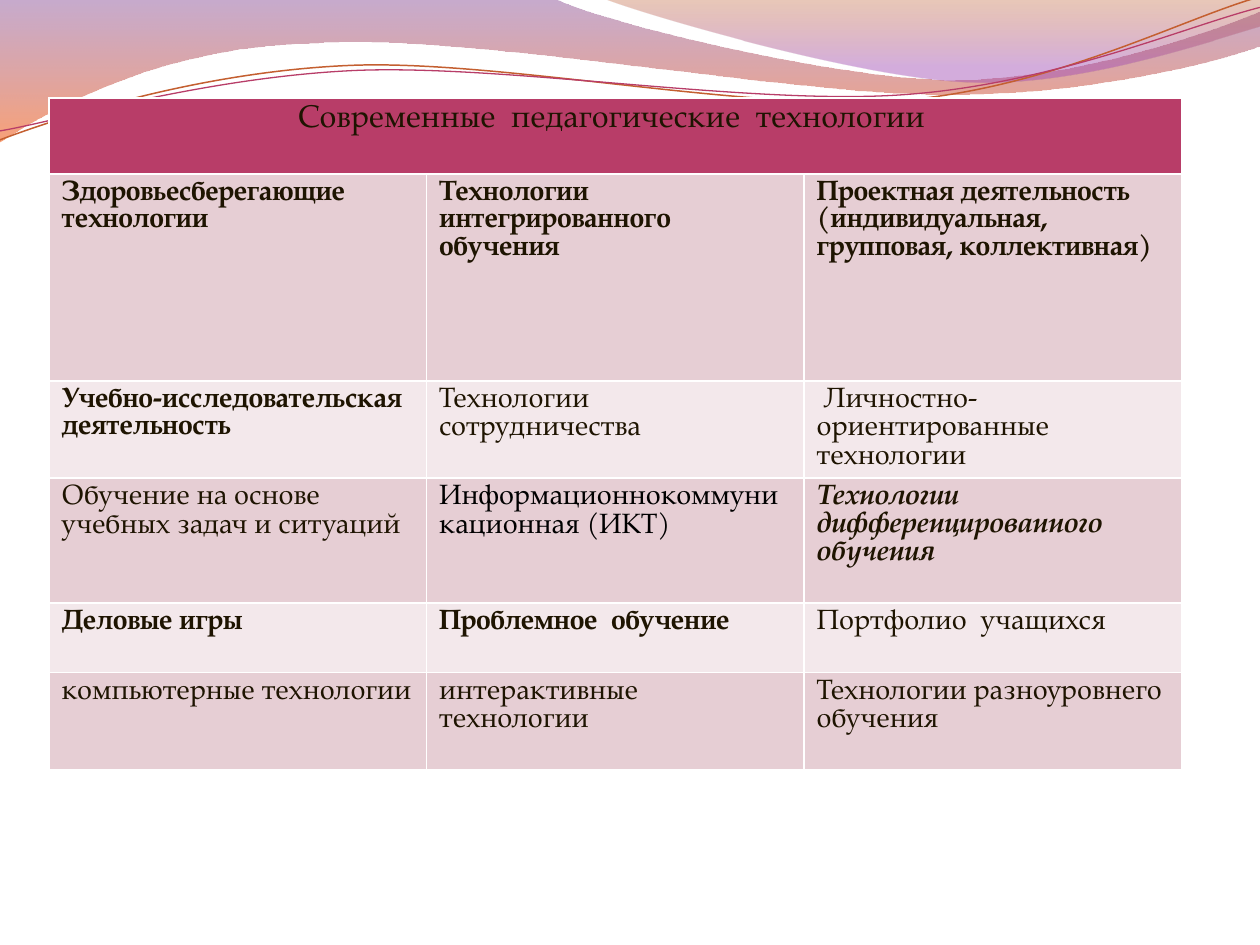
"""Build a slide with a wave header and a table of teaching technologies."""
from dataclasses import dataclass

from lxml import etree
from pptx import Presentation
from pptx import util as u
from pptx.dml.color import RGBColor
from pptx.enum import text
from pptx.oxml import ns

FONT = "TeX Gyre Pagella"
INK, BLACK = "1E1401", "000000"
HEADER_FILL, BAND_FILLS = "B83D68", ("E6CED4", "F3E8EB")
TABLE_LEFT, TABLE_TOP, COLUMN_WIDTH, TABLE_HEIGHT = 0.99, 1.98, 7.61, 15.93
ROW_HEIGHTS = (1.53, 4.17, 1.96, 2.52, 1.4, 1.96)


@dataclass(frozen=True)
class Stop:
    position: int
    color: str
    opacity: int


@dataclass(frozen=True)
class Wave:
    start: tuple
    steps: tuple
    stops: tuple = ()
    line: str = ""
    width: float = 0


@dataclass(frozen=True)
class Entry:
    words: str
    bold: bool = False
    italic: bool = False
    color: str = INK
    size: int = 16


WAVES = (
    Wave((0, 0), (
        (11.18, -0.03),
        (12.09, 0.43, 16.87, 1.6, 19.25, 1.6),
        (21.67, 1.6, 24.33, 0.66, 25.4, 0.23),
        (25.43, 0.91),
        (24.97, 1.12, 22.1, 1.93, 18.95, 1.9),
        (15.8, 1.9, 9.7, 0.71, 6.53, 0.86),
        (3.28, 0.91, 1.17, 2.11, -0.03, 2.87),
    ), stops=(Stop(0, "834591", 45), Stop(100, "F35307", 55))),
    Wave((12.17, -0.03), (
        (12.93, 0.28, 17.32, 1.57, 19.53, 1.65),
        (21.74, 1.75, 24.41, 0.81, 25.4, 0.53),
        (25.4, 0),
    ), stops=(Stop(0, "B74915", 30), Stop(80, "A14BB4", 45))),
    Wave((0, 2.82), (
        (1.22, 2.36, 4.01, 1.45, 7.04, 1.32),
        (10.03, 1.19, 15.06, 2.26, 18.11, 2.03),
        (21.16, 1.8, 23.83, 0.38, 25.35, -0.05),
    ), line="C45F30", width=0.85),
    Wave((0, 2.64), (
        (1.19, 2.44, 4.17, 1.55, 7.19, 1.42),
        (10.24, 1.3, 15.16, 2.13, 18.21, 1.91),
        (21.23, 1.7, 23.9, 0.53, 25.4, 0.15),
    ), line="B83D68", width=0.75),
)

TITLE = Entry("Современные  педагогические  технологии ", size=18)
ROWS = (
    (Entry("Здоровьесберегающие технологии", bold=True),
     Entry("Технологии интегрированного\nобучения", bold=True),
     Entry("Проектная деятельность (индивидуальная, групповая, коллективная)", bold=True)),
    (Entry("Учебно-исследовательская деятельность", bold=True),
     Entry("Технологии сотрудничества"),
     Entry(" Личностно-ориентированные технологии")),
    (Entry("Обучение на основе учебных задач и ситуаций"),
     Entry("Информационнокоммуникационная (ИКТ)", color=BLACK),
     Entry("Технологии дифференцированного обучения", bold=True, italic=True)),
    (Entry("Деловые игры", bold=True),
     Entry("Проблемное  обучение", bold=True),
     Entry("Портфолио  учащихся")),
    (Entry("компьютерные технологии"),
     Entry("интерактивные технологии"),
     Entry("Технологии разноуровнего обучения")),
)


def rgb(color: str) -> RGBColor:
    return RGBColor.from_string(color)


def add_node(parent, tag: str, **attributes):
    values = {name: str(value) for name, value in attributes.items()}
    return etree.SubElement(parent, ns.qn(tag), values)


def bend_segments(shape, steps: tuple) -> None:
    segments = list(shape.element.spPr.iter(ns.qn("a:lnTo")))
    for segment, step in zip(segments, steps):
        if len(step) == 2:
            continue
        curve = etree.Element(ns.qn("a:cubicBezTo"))
        for x, y in zip(step[::2], step[1::2]):
            add_node(curve, "a:pt", x=u.Cm(x) - shape.left, y=u.Cm(y) - shape.top)
        segment.getparent().replace(segment, curve)


def fill_gradient(shape, stops: tuple) -> None:
    shape.fill.gradient()
    gradient = shape.element.spPr.find(ns.qn("a:gradFill"))
    for child in list(gradient):
        gradient.remove(child)
    stop_list = add_node(gradient, "a:gsLst")
    for stop in stops:
        node = add_node(stop_list, "a:gs", pos=stop.position * 1000)
        color = add_node(node, "a:srgbClr", val=stop.color)
        add_node(color, "a:alpha", val=stop.opacity * 1000)
    add_node(gradient, "a:lin", ang=90 * 60000, scaled=0)


def draw_wave(page, wave: Wave) -> None:
    start, *anchors = [(u.Cm(x), u.Cm(y)) for *_, x, y in (wave.start, *wave.steps)]
    builder = page.shapes.build_freeform(*start)
    builder.add_line_segments(anchors, close=bool(wave.stops))
    shape = builder.convert_to_shape()
    bend_segments(shape, wave.steps)
    shape.shadow.inherit = False
    if wave.stops:
        fill_gradient(shape, wave.stops)
        shape.line.fill.background()
    else:
        shape.fill.background()
        shape.line.color.rgb = rgb(wave.line)
        shape.line.width = u.Pt(wave.width)


def write_cell(cell, entry: Entry, fill: str, align) -> None:
    cell.fill.solid()
    cell.fill.fore_color.rgb = rgb(fill)
    cell.text_frame.text = entry.words
    for para in cell.text_frame.paragraphs:
        para.alignment = align
        for span in para.runs:
            span.font.name = FONT
            span.font.size = u.Pt(entry.size)
            span.font.bold = entry.bold
            span.font.italic = entry.italic
            span.font.color.rgb = rgb(entry.color)


def draw_table(page) -> None:
    columns = len(ROWS[0])
    frame = page.shapes.add_table(
        len(ROW_HEIGHTS), columns, u.Cm(TABLE_LEFT), u.Cm(TABLE_TOP),
        u.Cm(COLUMN_WIDTH * columns), u.Cm(TABLE_HEIGHT))
    table = frame.table
    for column in table.columns:
        column.width = u.Cm(COLUMN_WIDTH)
    for row, height in zip(table.rows, ROW_HEIGHTS):
        row.height = u.Cm(height)
    frame.height = u.Cm(TABLE_HEIGHT)
    table.cell(0, 0).merge(table.cell(0, columns - 1))
    write_cell(table.cell(0, 0), TITLE, HEADER_FILL, text.PP_ALIGN.CENTER)
    for number, entries in enumerate(ROWS):
        for column, entry in enumerate(entries):
            write_cell(table.cell(number + 1, column), entry,
                       BAND_FILLS[number % 2], text.PP_ALIGN.LEFT)


def main() -> None:
    deck = Presentation()
    deck.slide_width, deck.slide_height = u.Cm(25.4), u.Cm(19.05)
    page = deck.slides.add_slide(deck.slide_layouts[6])
    for wave in WAVES:
        draw_wave(page, wave)
    draw_table(page)
    deck.save("out.pptx")


if __name__ == "__main__":
    main()
